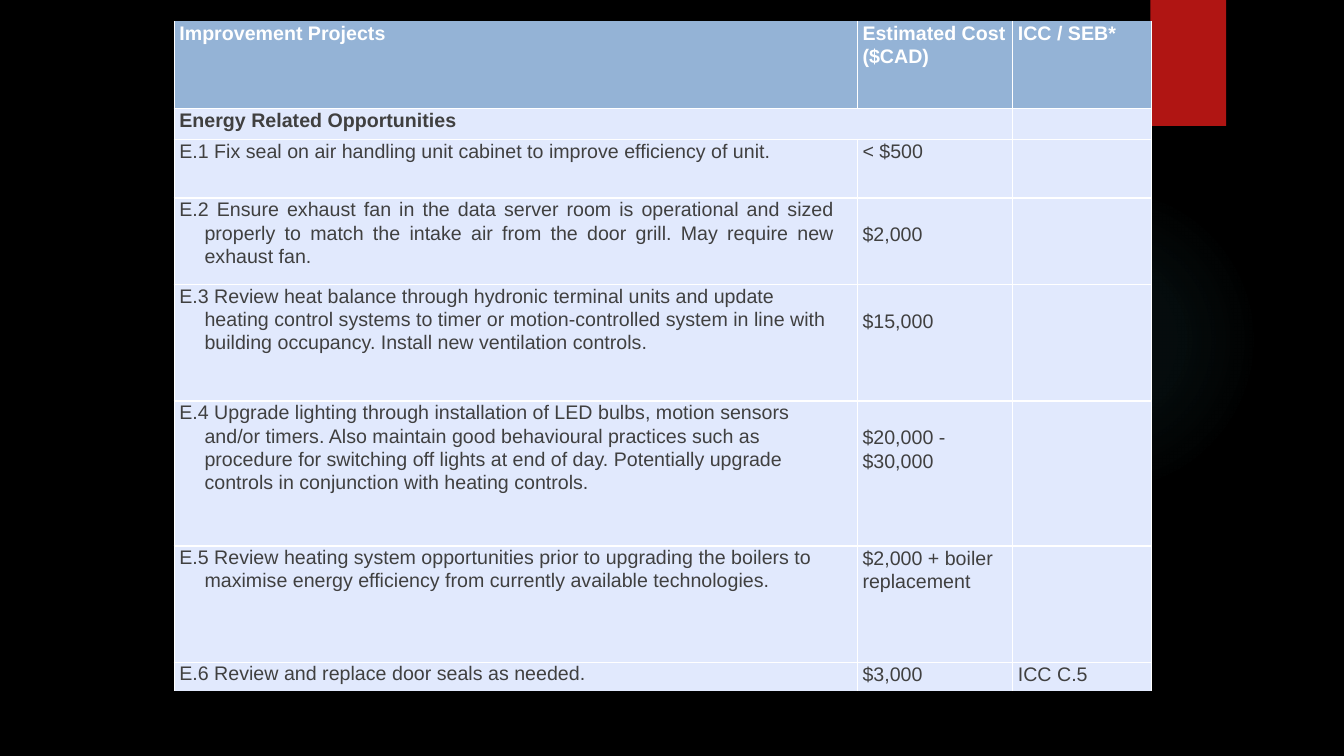
from dataclasses import dataclass

from lxml import etree
from pptx import Presentation
from pptx.dml.color import RGBColor
from pptx.enum.shapes import MSO_SHAPE
from pptx.enum.text import PP_ALIGN
from pptx.oxml import parse_xml
from pptx.oxml.ns import nsdecls, qn
from pptx.util import Pt

RECTANGLE, OVAL = MSO_SHAPE.RECTANGLE, MSO_SHAPE.OVAL
LEFT, JUSTIFY = PP_ALIGN.LEFT, PP_ALIGN.JUSTIFY

HEADERS = ["Improvement Projects", "Estimated Cost ($CAD)", "ICC / SEB*"]
SECTION = "Energy Related Opportunities"
PROJECTS = [
    ("E.1 Fix seal on air handling unit cabinet to improve efficiency of unit.",
     ["< $500"], ""),
    ("E.2 Ensure exhaust fan in the data server room is operational and sized properly "
     "to match the intake air from the door grill. May require new exhaust fan.",
     ["$2,000"], ""),
    ("E.3 Review heat balance through hydronic terminal units and update heating control "
     "systems to timer or motion-controlled system in line with building occupancy. "
     "Install new ventilation controls.",
     ["$15,000"], ""),
    ("E.4 Upgrade lighting through installation of LED bulbs, motion sensors and/or timers. "
     "Also maintain good behavioural practices such as procedure for switching off lights "
     "at end of day. Potentially upgrade controls in conjunction with heating controls.",
     ["$20,000 -", "$30,000"], ""),
    ("E.5 Review heating system opportunities prior to upgrading the boilers to maximise "
     "energy efficiency from currently available technologies.",
     ["$2,000 + boiler replacement"], ""),
    ("E.6 Review and replace door seals as needed.", ["$3,000"], "ICC C.5"),
]
LOWERED_COSTS = {"E.2", "E.3", "E.4"}
JUSTIFIED = {"E.2"}

SLIDE_SIZE = (960, 540)
TABLE_ORIGIN = (124.5, 15)
COLUMN_WIDTHS = [488, 111, 99]
ROW_HEIGHTS = [62.5, 21, 42, 62, 83, 103.5, 83, 21]
GLOW_BOX = (677.5, 131.75, 221.75, 221.75)
TAB_BOX = (821.75, 0, 54, 90)
INDENT, HANGING_LEFT, HANGING = 3.6, 21.6, -18
COST_DROP, PROJECT_RIGHT = 17.25, 16.5
GLOW_STOPS = [(0, 7), (36, 6), (69, 0), (100, 0)]


@dataclass(frozen=True)
class Theme:
    background: str = "000000"
    glow: str = "50B9C1"
    tab: str = "B01513"
    header: str = "94B3D6"
    row: str = "E1E9FD"
    white: str = "FFFFFF"
    text: str = "404040"
    font: str = "Arial"
    size: float = 14
    border: float = 1


THEME = Theme()


def rgb(value):
    return RGBColor.from_string(value)


def write(cell, lines, color=THEME.text, bold=False, align=LEFT, left=INDENT,
          hanging=0, spacing=1.07, top=0, right=0):
    cell.margin_left = cell.margin_bottom = 0
    cell.margin_top, cell.margin_right = Pt(top), Pt(right)
    frame = cell.text_frame
    for number, line in enumerate(lines):
        para = frame.add_paragraph() if number else frame.paragraphs[0]
        para.alignment = align
        para.line_spacing = spacing
        if number:
            para.space_before = Pt(0.7)
        properties = para._p.get_or_add_pPr()
        properties.set("marL", str(Pt(left)))
        properties.set("indent", str(Pt(hanging)))
        if line:
            span = para.add_run()
            span.text = line
            span.font.name = THEME.font
            span.font.size = Pt(THEME.size)
            span.font.bold = bold
            span.font.color.rgb = rgb(color)


def paint(cell, color, hidden_edge):
    cell.fill.solid()
    cell.fill.fore_color.rgb = rgb(color)
    properties = cell._tc.get_or_add_tcPr()
    for position, edge in enumerate(("lnL", "lnR", "lnT", "lnB")):
        line = etree.Element(qn(f"a:{edge}"), w=str(Pt(THEME.border)))
        if edge == hidden_edge:
            etree.SubElement(line, qn("a:noFill"))
        else:
            solid = etree.SubElement(line, qn("a:solidFill"))
            etree.SubElement(solid, qn("a:srgbClr"), val=THEME.white)
        properties.insert(position, line)


def add_plain_shape(page, kind, box, color):
    shape = page.shapes.add_shape(kind, *(Pt(value) for value in box))
    shape.shadow.inherit = False
    shape.fill.solid()
    shape.fill.fore_color.rgb = rgb(color)
    shape.line.fill.background()
    return shape


def add_glow(page):
    glow = add_plain_shape(page, OVAL, GLOW_BOX, THEME.glow)
    stops = "".join(
        f'<a:gs pos="{place * 1000}"><a:srgbClr val="{THEME.glow}">'
        f'<a:alpha val="{opacity * 1000}"/></a:srgbClr></a:gs>'
        for place, opacity in GLOW_STOPS)
    gradient = parse_xml(
        f'<a:gradFill {nsdecls("a")} rotWithShape="1"><a:gsLst>{stops}</a:gsLst>'
        '<a:path path="circle"><a:fillToRect l="50000" t="50000" r="50000" b="50000"/>'
        '</a:path></a:gradFill>')
    properties = glow._element.spPr
    properties.replace(properties.find(qn("a:solidFill")), gradient)


def add_project_table(page):
    frame = page.shapes.add_table(
        len(ROW_HEIGHTS), len(COLUMN_WIDTHS), *(Pt(value) for value in TABLE_ORIGIN),
        Pt(sum(COLUMN_WIDTHS)), Pt(sum(ROW_HEIGHTS)))
    table = frame.table
    table.horz_banding = False
    for column, width in zip(table.columns, COLUMN_WIDTHS):
        column.width = Pt(width)
    for row, height in zip(table.rows, ROW_HEIGHTS):
        row.height = Pt(height)

    hidden_edges = {0: "lnT", len(ROW_HEIGHTS) - 1: "lnB"}
    for index, row in enumerate(table.rows):
        for cell in row.cells:
            paint(cell, THEME.row if index else THEME.header, hidden_edges.get(index))

    for column, header in enumerate(HEADERS):
        write(table.cell(0, column), [header], color=THEME.white, bold=True)
    table.cell(1, 0).merge(table.cell(1, 1))
    write(table.cell(1, 0), [SECTION], bold=True)
    write(table.cell(1, 2), [""])

    for index, (project, cost, reference) in enumerate(PROJECTS, start=2):
        code = project.split()[0]
        write(table.cell(index, 0), [project], left=HANGING_LEFT, hanging=HANGING,
              spacing=1.05, right=PROJECT_RIGHT,
              align=JUSTIFY if code in JUSTIFIED else LEFT)
        write(table.cell(index, 1), cost, top=COST_DROP if code in LOWERED_COSTS else 0)
        write(table.cell(index, 2), [reference])


def main():
    deck = Presentation()
    deck.slide_width, deck.slide_height = (Pt(value) for value in SLIDE_SIZE)
    page = deck.slides.add_slide(deck.slide_layouts[6])
    page.background.fill.solid()
    page.background.fill.fore_color.rgb = rgb(THEME.background)
    add_glow(page)
    add_plain_shape(page, RECTANGLE, TAB_BOX, THEME.tab)
    add_project_table(page)
    deck.save("out.pptx")


if __name__ == "__main__":
    main()
